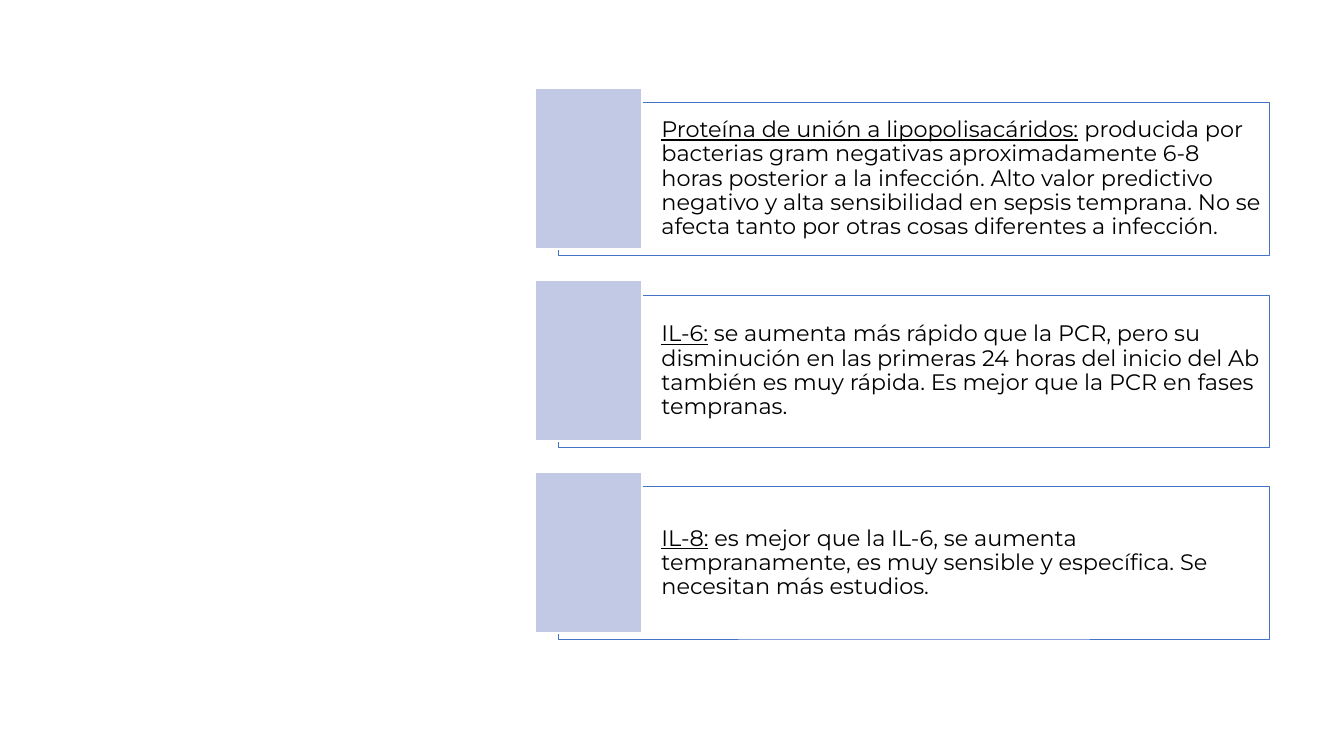
"""Build a slide with three framed notes on sepsis biomarkers."""
from dataclasses import dataclass

from lxml import etree
from pptx import Presentation
from pptx.dml.color import RGBColor as RGB
from pptx.enum.shapes import MSO_SHAPE as SHAPE
from pptx.enum.text import MSO_ANCHOR as ANCHOR, PP_ALIGN as ALIGN
from pptx.oxml.ns import qn
from pptx.util import Inches, Pt

MARKERS = [
    ("Proteína de unión a lipopolisacáridos:",
     " producida por bacterias gram negativas aproximadamente 6-8 horas "
     "posterior a la infección. Alto valor predictivo negativo y alta "
     "sensibilidad en sepsis temprana. No se afecta tanto por otras cosas "
     "diferentes a infección."),
    ("IL-6:",
     " se aumenta más rápido que la PCR, pero su disminución en las primeras "
     "24 horas del inicio del Ab también es muy rápida. Es mejor que la PCR "
     "en fases tempranas."),
    ("IL-8:",
     " es mejor que la IL-6, se aumenta tempranamente, es muy sensible y "
     "específica. Se necesitan más estudios."),
]


@dataclass(frozen=True)
class Theme:
    font: str = "Montserrat"
    size: int = 16
    text: RGB = RGB(0, 0, 0)
    white: RGB = RGB(255, 255, 255)
    frame: RGB = RGB(0x44, 0x72, 0xC4)
    tab: RGB = RGB(0xC1, 0xC9, 0xE4)


THEME = Theme()
SLIDE_W, SLIDE_H = 13.33, 7.5
FRAME_X, FRAME_Y, FRAME_W, FRAME_H = 5.54, 1.02, 7.05, 1.51
TAB_W, TAB_H = 1.06, 1.59
TAB_DX, TAB_DY = -0.23, -0.14
ROW_STEP = 1.905
TEXT_INDENT, INSET = 1.02, 0.07


def add_rect(s, x, y, w, h, fill, line, width):
    sp = s.shapes.add_shape(SHAPE.RECTANGLE, *map(Inches, (x, y, w, h)))
    sp.shadow.inherit = False
    sp.fill.solid()
    sp.fill.fore_color.rgb = fill
    sp.line.color.rgb = line
    sp.line.width = Pt(width)
    return sp


def set_opacity(sp, percent):
    color = sp.fill._xPr.find(qn("a:solidFill"))[0]
    etree.SubElement(color, qn("a:alpha"), val=str(percent * 1000))


def write_marker(sp, name, description):
    tf = sp.text_frame
    tf.word_wrap = True
    tf.vertical_anchor = ANCHOR.MIDDLE
    tf.margin_left = Inches(TEXT_INDENT)
    tf.margin_top = tf.margin_right = tf.margin_bottom = Inches(INSET)
    p = tf.paragraphs[0]
    p.alignment = ALIGN.LEFT
    p.line_spacing = 0.9
    for text, underlined in ((name, True), (description, False)):
        r = p.add_run()
        r.text = text
        r.font.name = THEME.font
        r.font.size = Pt(THEME.size)
        r.font.color.rgb = THEME.text
        r.font.underline = underlined


def main():
    prs = Presentation()
    prs.slide_width, prs.slide_height = Inches(SLIDE_W), Inches(SLIDE_H)
    s = prs.slides.add_slide(prs.slide_layouts[6])
    for row, (name, description) in enumerate(MARKERS):
        y = FRAME_Y + row * ROW_STEP
        frame = add_rect(s, FRAME_X, y, FRAME_W, FRAME_H,
                         THEME.white, THEME.frame, 0.5)
        set_opacity(frame, 40)
        write_marker(frame, name, description)
        add_rect(s, FRAME_X + TAB_DX, y + TAB_DY, TAB_W, TAB_H,
                 THEME.tab, THEME.white, 1)
    prs.save("out.pptx")


if __name__ == "__main__":
    main()
